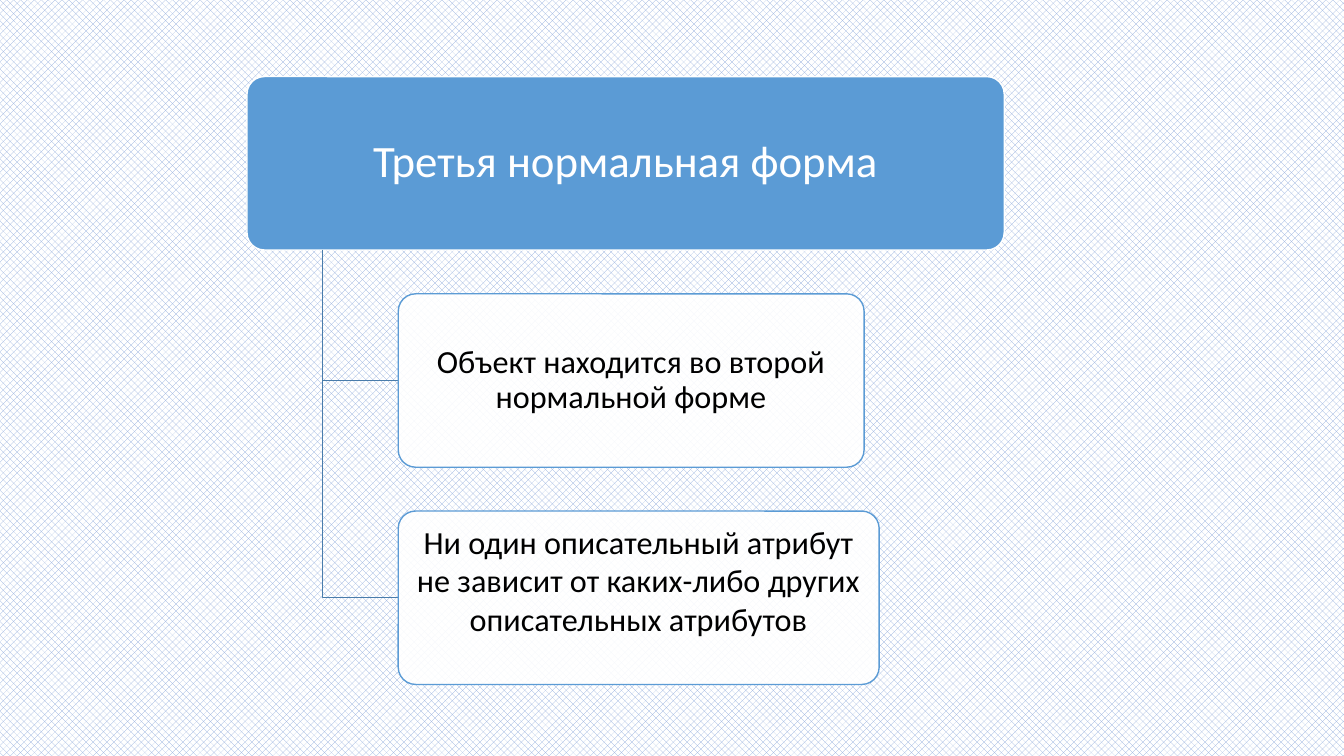
from lxml import etree
from pptx import Presentation
from pptx.dml.color import RGBColor as RGB
from pptx.enum.dml import MSO_PATTERN as PATTERN
from pptx.enum.shapes import MSO_SHAPE as SHAPE
from pptx.enum.text import MSO_ANCHOR as ANCHOR, PP_ALIGN as ALIGN
from pptx.oxml.ns import qn
from pptx.util import Inches, Pt

COLORS = {
    "blue": "5B9BD5",
    "white": "FFFFFF",
    "black": "000000",
    "link": "497CAB",
    "hatch": "8FAADC",
}
FONT = "Calibri"
LEFT, TOP, HIGH, STEP = 2.45, 0.76, 1.72, 2.155
TRUNK, INDENT = 0.75, 1.5

TITLE = "Третья нормальная форма"
# Text, box width, line spacing, bottom inset
RULES = [
    ("Объект находится во второй нормальной форме", 4.62, 0.9, 0.03),
    ("Ни один описательный атрибут не зависит от каких-либо "
     "других описательных атрибутов", 4.77, 1.0, 0.38),
]


def color(name):
    return RGB.from_string(COLORS[name])


def set_back(slide):
    fill = slide.background.fill
    fill.patterned()
    fill.pattern = PATTERN.PERCENT_50
    fill.fore_color.rgb = color("hatch")
    fill.back_color.rgb = color("white")


def set_alpha(shape, percent):
    tone = shape.fill._xPr.find(qn("a:solidFill"))[0]
    etree.SubElement(tone, qn("a:alpha"), val=str(percent * 1000))


def set_line(shape, name):
    shape.shadow.inherit = False
    shape.line.color.rgb = color(name)
    shape.line.width = Pt(1)


def add_box(slide, left, top, width, fill, line):
    box = slide.shapes.add_shape(
        SHAPE.ROUNDED_RECTANGLE,
        Inches(left), Inches(top), Inches(width), Inches(HIGH))
    box.adjustments[0] = 0.1
    box.fill.solid()
    box.fill.fore_color.rgb = color(fill)
    set_line(box, line)
    return box


def set_text(box, text, size, ink, insets, spacing=0.9):
    frame = box.text_frame
    frame.word_wrap = True
    frame.vertical_anchor = ANCHOR.MIDDLE
    side, top, bottom = insets
    frame.margin_left = frame.margin_right = Inches(side)
    frame.margin_top, frame.margin_bottom = Inches(top), Inches(bottom)
    frame.text = text
    para = frame.paragraphs[0]
    para.alignment = ALIGN.CENTER
    para.line_spacing = spacing
    font = para.runs[0].font
    font.name, font.size = FONT, Pt(size)
    font.color.rgb = color(ink)


def add_link(slide, top):
    x, y = LEFT + TRUNK, top + HIGH / 2
    path = slide.shapes.build_freeform(Inches(x), Inches(TOP + HIGH))
    path.add_line_segments(
        [(Inches(x), Inches(y)), (Inches(LEFT + INDENT), Inches(y))],
        close=False)
    link = path.convert_to_shape()
    link.fill.background()
    set_line(link, "link")


def main():
    deck = Presentation()
    deck.slide_width, deck.slide_height = Inches(13.33), Inches(7.5)
    slide = deck.slides.add_slide(deck.slide_layouts[6])
    set_back(slide)

    # Root of the tree
    root = add_box(slide, LEFT, TOP, 7.51, "blue", "white")
    set_text(root, TITLE, 32, "white", (0.07, 0.04, 0.04))

    # Conditions hanging from the root
    for row, (text, width, spacing, bottom) in enumerate(RULES, 1):
        top = TOP + row * STEP
        add_link(slide, top)
        box = add_box(slide, LEFT + INDENT, top, width, "white", "blue")
        set_alpha(box, 90)
        set_text(box, text, 23, "black", (0.05, 0.03, bottom), spacing)

    deck.save("out.pptx")


if __name__ == "__main__":
    main()
